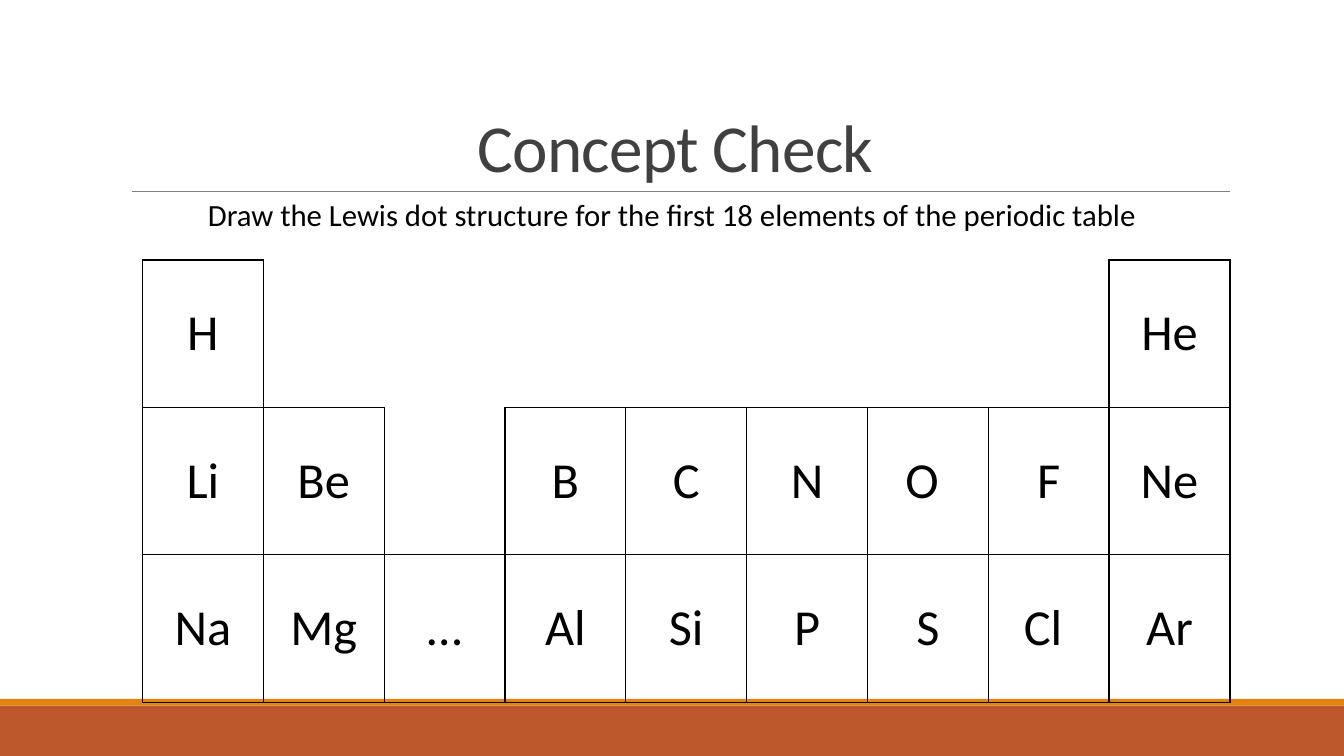
from lxml import etree
from pptx import Presentation
from pptx.dml.color import RGBColor
from pptx.enum.shapes import MSO_CONNECTOR, MSO_SHAPE
from pptx.enum.text import MSO_ANCHOR, MSO_AUTO_SIZE, PP_ALIGN
from pptx.oxml.ns import qn
from pptx.util import Cm, Pt

CENTER = PP_ALIGN.CENTER
MIDDLE, BOTTOM = MSO_ANCHOR.MIDDLE, MSO_ANCHOR.BOTTOM
RECTANGLE, STRAIGHT = MSO_SHAPE.RECTANGLE, MSO_CONNECTOR.STRAIGHT
NO_AUTOFIT = MSO_AUTO_SIZE.NONE

TITLE = "Concept Check"
TASK = "Draw the Lewis dot structure for the first 18 elements of the periodic table"
ELEMENTS = [
    ["H", "", "", "", "", "", "", "", "He"],
    ["Li", "Be", "", "B", "C", "N", "O ", "F", "Ne"],
    ["Na", "Mg", "…", "Al", "Si", "P", "S", "Cl ", "Ar"],
]
COLORS = {"footer": "BD582C", "stripe": "E48312", "rule": "808080",
          "title": "404040", "text": "000000"}
FONT = "Calibri"
SLIDE_W, SLIDE_H = Cm(33.87), Cm(19.05)
FOOTER_TOP, STRIPE_H = Cm(17.78), Cm(0.17)
RULE_Y = Cm(4.82)
TABLE_LEFT, TABLE_TOP = Cm(3.59), Cm(6.55)
CELL_W, CELL_H = Cm(3.045), Cm(3.715)
SIDES = {"a:lnL": (0, -1), "a:lnR": (0, 1), "a:lnT": (-1, 0), "a:lnB": (1, 0)}


def rgb(name):
    return RGBColor.from_string(COLORS[name])


def style_paragraph(paragraph, size, color):
    paragraph.alignment = CENTER
    paragraph.font.name = FONT
    paragraph.font.size = Pt(size)
    paragraph.font.color.rgb = rgb(color)


def add_band(slide, top, height, color):
    band = slide.shapes.add_shape(RECTANGLE, 0, top, SLIDE_W, height)
    band.shadow.inherit = False
    band.fill.solid()
    band.fill.fore_color.rgb = rgb(color)
    band.line.fill.background()


def add_rule(slide):
    rule = slide.shapes.add_connector(STRAIGHT, Cm(3.32), RULE_Y, Cm(31), RULE_Y)
    rule.line.color.rgb = rgb("rule")
    rule.line.width = Pt(0.5)
    etree.SubElement(rule._element.spPr, qn("a:effectLst"))


def add_title(slide):
    title = slide.shapes.title
    title.left, title.top, title.width, title.height = Cm(3.05), Cm(0.79), Cm(27.94), Cm(4.03)
    frame = title.text_frame
    frame.text = TITLE
    frame.auto_size = NO_AUTOFIT
    frame.vertical_anchor = BOTTOM
    paragraph = frame.paragraphs[0]
    style_paragraph(paragraph, 48, "title")
    paragraph.line_spacing = 0.85
    paragraph.runs[0].font._element.set("spc", "-50")


def add_task(slide):
    frame = slide.shapes.add_textbox(0, RULE_Y, SLIDE_W, Cm(1.2)).text_frame
    frame.word_wrap = True
    frame.text = TASK
    style_paragraph(frame.paragraphs[0], 22, "text")


def has_element(row, column):
    return (0 <= row < len(ELEMENTS) and 0 <= column < len(ELEMENTS[0])
            and ELEMENTS[row][column] != "")


def set_borders(cell, row, column):
    """Rule every side that touches an element, in this cell or the next one."""
    properties = cell._tc.get_or_add_tcPr()
    for tag, (down, across) in SIDES.items():
        border = etree.SubElement(properties, qn(tag), w=str(Pt(1)))
        if has_element(row, column) or has_element(row + down, column + across):
            fill = etree.SubElement(border, qn("a:solidFill"))
            etree.SubElement(fill, qn("a:srgbClr"), val=COLORS["text"])
        else:
            etree.SubElement(border, qn("a:noFill"))


def add_periodic_table(slide):
    rows, columns = len(ELEMENTS), len(ELEMENTS[0])
    table = slide.shapes.add_table(rows, columns, TABLE_LEFT, TABLE_TOP,
                                   CELL_W * columns, CELL_H * rows).table
    table.first_row = table.horz_banding = False
    for column in table.columns:
        column.width = CELL_W
    for r, symbols in enumerate(ELEMENTS):
        table.rows[r].height = CELL_H
        for c, symbol in enumerate(symbols):
            cell = table.cell(r, c)
            set_borders(cell, r, c)
            cell.fill.background()
            if symbol:
                cell.text = symbol
                cell.vertical_anchor = MIDDLE
                style_paragraph(cell.text_frame.paragraphs[0], 36, "text")


def main():
    deck = Presentation()
    deck.slide_width, deck.slide_height = SLIDE_W, SLIDE_H
    slide = deck.slides.add_slide(deck.slide_layouts[5])
    add_band(slide, FOOTER_TOP, SLIDE_H - FOOTER_TOP, "footer")
    add_band(slide, FOOTER_TOP - STRIPE_H, STRIPE_H, "stripe")
    add_rule(slide)
    add_title(slide)
    add_task(slide)
    add_periodic_table(slide)
    deck.save("out.pptx")


if __name__ == "__main__":
    main()
